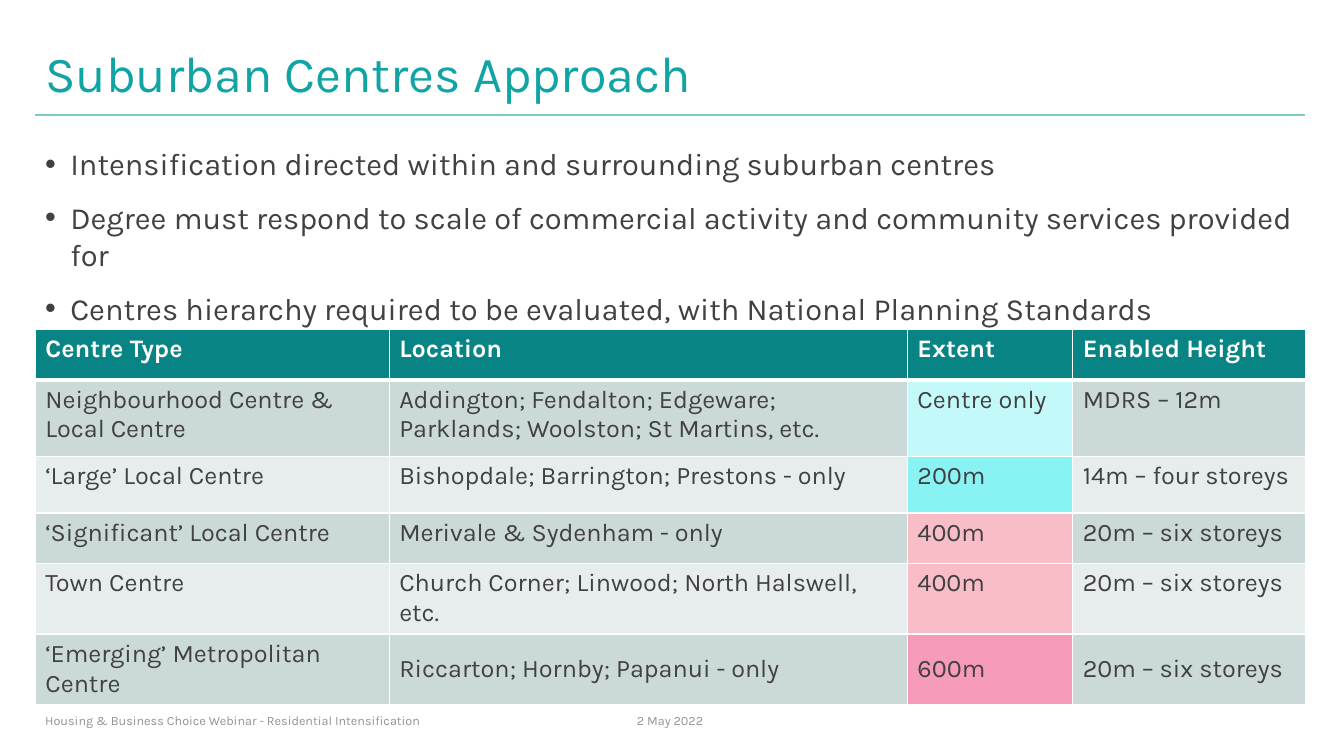
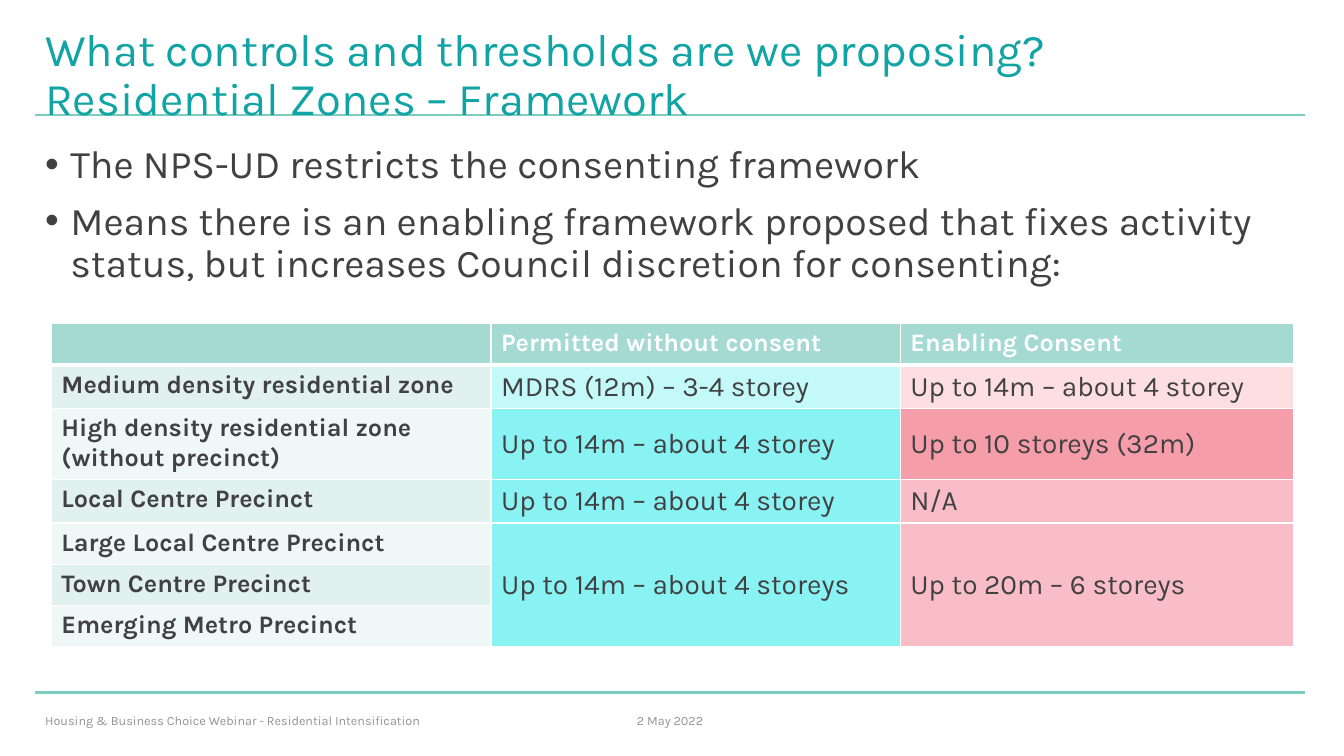
from dataclasses import dataclass

from lxml.etree import SubElement
from pptx import Presentation
from pptx.dml.color import RGBColor
from pptx.enum.shapes import MSO_CONNECTOR
from pptx.enum.text import MSO_ANCHOR, PP_ALIGN
from pptx.oxml import parse_xml
from pptx.oxml.ns import nsdecls, qn
from pptx.util import Pt

PX = 9144
FONT = "Karla"
WHITE = RGBColor(0xFF, 0xFF, 0xFF)
INK = RGBColor(0x41, 0x40, 0x42)
TITLE_TEAL = RGBColor(0x12, 0xA4, 0xA4)
RULE_TEAL = RGBColor(0x7C, 0xCC, 0xBF)
FOOTER_GREY = RGBColor(0x93, 0x93, 0x93)
DARK_TEAL = RGBColor(0x09, 0x84, 0x84)
SOFT_TEAL = RGBColor(0xA4, 0xDA, 0xD2)
GREY_BANDS = (RGBColor(0xCC, 0xD9, 0xD9), RGBColor(0xE7, 0xED, 0xED))
MINT_BANDS = (RGBColor(0xE0, 0xF1, 0xEE), RGBColor(0xF0, 0xF8, 0xF7))
PALE_CYAN = RGBColor(0xC4, 0xF9, 0xF9)
CYAN = RGBColor(0x89, 0xF2, 0xF2)
PALE_PINK = RGBColor(0xFC, 0xDE, 0xE3)
PINK = RGBColor(0xF9, 0xBD, 0xC7)
CORAL = RGBColor(0xF6, 0x9D, 0xAA)
ROSE = RGBColor(0xF7, 0x9B, 0xBA)

TITLE_BOX = (35, 40, 1260, 72)
FOOTER_BOX = (35, 695, 503, 40)
DATE_BOX = (607, 695, 115, 40)
RULE_LEFT, RULE_RIGHT = 35, 1294
RULE_TOPS = (687, 114)


@dataclass
class Cell:
    """Content and look of one table cell."""
    text: str
    fill: RGBColor
    size: int = 18
    bold: bool = False
    color: RGBColor = INK
    anchor: MSO_ANCHOR = MSO_ANCHOR.TOP
    row_span: int = 1


def scaled(box):
    """Turn px lengths into EMU."""
    return [length * PX for length in box]


def add_run(paragraph, text, size, color, bold=False):
    """Add one formatted run to a paragraph."""
    run = paragraph.add_run()
    run.text = text
    run.font.name = FONT
    run.font.size = Pt(size)
    run.font.bold = bold
    run.font.color.rgb = color


def add_text_frame(slide, box, anchor=MSO_ANCHOR.MIDDLE):
    """Add a wrapping text box and return its text frame."""
    frame = slide.shapes.add_textbox(*scaled(box)).text_frame
    frame.word_wrap = True
    frame.vertical_anchor = anchor
    return frame


def add_rule(slide, top):
    """Draw a horizontal teal rule across the slide."""
    ends = scaled((RULE_LEFT, top, RULE_RIGHT, top))
    rule = slide.shapes.add_connector(MSO_CONNECTOR.STRAIGHT, *ends)
    rule.line.color.rgb = RULE_TEAL
    rule.line.width = Pt(1.5)
    SubElement(rule._element.spPr, qn("a:effectLst"))


def add_title(slide, lines, size):
    """Write the title, one run for each line."""
    paragraph = add_text_frame(slide, TITLE_BOX).paragraphs[0]
    paragraph.line_spacing = 0.9
    for index, line in enumerate(lines):
        if index:
            paragraph.add_line_break()
        add_run(paragraph, line, size, TITLE_TEAL)


def add_footer(slide):
    """Write the date and the webinar name."""
    for box, text, alignment in (
        (DATE_BOX, "2 May 2022", PP_ALIGN.CENTER),
        (FOOTER_BOX, "Housing & Business Choice Webinar - Residential Intensification", PP_ALIGN.LEFT),
    ):
        paragraph = add_text_frame(slide, box).paragraphs[0]
        paragraph.alignment = alignment
        add_run(paragraph, text, 9, FOOTER_GREY)


def add_bullets(slide, box, items, size, line_spacing, before, after):
    """Write a bulleted list with a hanging indent."""
    frame = add_text_frame(slide, box, MSO_ANCHOR.TOP)
    for index, item in enumerate(items):
        paragraph = frame.add_paragraph() if index else frame.paragraphs[0]
        properties = paragraph._p.get_or_add_pPr()
        properties.set("marL", str(25 * PX))
        properties.set("indent", str(-25 * PX))
        SubElement(properties, qn("a:buFont")).set("typeface", "Arial")
        SubElement(properties, qn("a:buChar")).set("char", "•")
        paragraph.line_spacing = line_spacing
        paragraph.space_before = Pt(before if index else 0)
        paragraph.space_after = Pt(after)
        add_run(paragraph, item, size, INK)


def add_borders(cell, row):
    """Give a cell white borders, thick between header and body."""
    widths = {"L": 1, "R": 1, "T": 3 if row == 1 else 1, "B": 3 if row == 0 else 1}
    properties = cell._tc.get_or_add_tcPr()
    for index, (side, width) in enumerate(widths.items()):
        properties.insert(index, parse_xml(
            f'<a:ln{side} {nsdecls("a")} w="{Pt(width)}"><a:solidFill>'
            f'<a:srgbClr val="{WHITE}"/></a:solidFill></a:ln{side}>'))


def fill_cell(cell, content):
    """Apply the content and look to a table cell."""
    cell.fill.solid()
    cell.fill.fore_color.rgb = content.fill
    cell.vertical_anchor = content.anchor
    frame = cell.text_frame
    for index, line in enumerate(content.text.splitlines()):
        paragraph = frame.add_paragraph() if index else frame.paragraphs[0]
        add_run(paragraph, line, content.size, content.color, content.bold)


def add_grid(slide, left, top, columns, heights, rows):
    """Place a table whose size follows from its columns and rows."""
    box = scaled((left, top, sum(columns), sum(heights)))
    table = slide.shapes.add_table(len(heights), len(columns), *box).table
    table.horz_banding = False
    for column, width in zip(table.columns, columns):
        column.width = width * PX
    for row, height in zip(table.rows, heights):
        row.height = height * PX
    for row_index, contents in enumerate(rows):
        for column_index in range(len(columns)):
            cell = table.cell(row_index, column_index)
            add_borders(cell, row_index)
            if column_index < len(contents):
                content = contents[column_index]
                fill_cell(cell, content)
                if content.row_span > 1:
                    cell.merge(table.cell(row_index + content.row_span - 1, column_index))


def header_row(labels, fill):
    """Return the bold white header cells."""
    return [Cell(label, fill, bold=True, color=WHITE) for label in labels]


def add_base_slide(presentation, title_lines, title_size):
    """Add a blank slide with rules, title and footer."""
    slide = presentation.slides.add_slide(presentation.slide_layouts[6])
    for top in RULE_TOPS:
        add_rule(slide, top)
    add_title(slide, title_lines, title_size)
    add_footer(slide)
    return slide


def add_centres_slide(presentation):
    """Build the slide on suburban centres."""
    slide = add_base_slide(presentation, ["Suburban Centres Approach"], 36)
    add_bullets(slide, (35, 139, 1260, 161), [
        "Intensification directed within and surrounding suburban centres",
        "Degree must respond to scale of commercial activity and community services provided for",
        "Centres hierarchy required to be evaluated, with National Planning Standards",
    ], 22, 1.0, 6, 6)
    centres = [
        ("Neighbourhood Centre &\nLocal Centre",
         "Addington; Fendalton; Edgeware; Parklands; Woolston; St Martins, etc.",
         "Centre only", "MDRS – 12m", PALE_CYAN),
        ("‘Large’ Local Centre", "Bishopdale; Barrington; Prestons - only",
         "200m", "14m – four storeys", CYAN),
        ("‘Significant’ Local Centre", "Merivale & Sydenham - only",
         "400m", "20m – six storeys", PINK),
        ("Town Centre", "Church Corner; Linwood; North Halswell, etc.",
         "400m", "20m – six storeys", PINK),
        ("‘Emerging’ Metropolitan Centre", "Riccarton; Hornby; Papanui - only",
         "600m", "20m – six storeys", ROSE),
    ]
    rows = [header_row(["Centre Type", "Location", "Extent", "Enabled Height"], DARK_TEAL)]
    for index, (*texts, extent_fill) in enumerate(centres):
        band = GREY_BANDS[index % 2]
        anchor = MSO_ANCHOR.MIDDLE if index == len(centres) - 1 else MSO_ANCHOR.TOP
        fills = (band, band, extent_fill, band)
        rows.append([Cell(text, fill, anchor=anchor) for text, fill in zip(texts, fills)])
    add_grid(slide, 35, 327, (351, 514, 164, 231), (50, 76, 56, 50, 50, 50), rows)


def add_framework_slide(presentation):
    """Build the slide on the residential zones framework."""
    slide = add_base_slide(presentation, [
        "What controls and thresholds are we proposing?",
        "Residential Zones – Framework",
    ], 32.4)
    add_bullets(slide, (35, 139, 1260, 161), [
        "The NPS-UD restricts the consenting framework",
        "Means there is an enabling framework proposed that fixes activity status, "
        "but increases Council discretion for consenting:",
    ], 28, 0.9, 10, 0)
    zones = [
        ("Medium density residential zone", 1,
         ("MDRS (12m) – 3-4 storey", PALE_CYAN), ("Up to 14m – about 4 storey", PALE_PINK)),
        ("High density residential zone (without precinct)", 1,
         ("Up to 14m – about 4 storey", CYAN), ("Up to 10 storeys (32m)", CORAL)),
        ("Local Centre Precinct", 1,
         ("Up to 14m – about 4 storey", CYAN), ("N/A", PINK)),
        ("Large Local Centre Precinct", 3,
         ("Up to 14m – about 4 storeys", CYAN), ("Up to 20m – 6 storeys", PINK)),
        ("Town Centre Precinct", 1),
        ("Emerging Metro Precinct", 1),
    ]
    rows = [header_row(["", "Permitted without consent", "Enabling Consent"], SOFT_TEAL)]
    for index, (zone, row_span, *limits) in enumerate(zones):
        rows.append([Cell(zone, MINT_BANDS[index % 2], bold=True)] + [
            Cell(text, fill, size=20, anchor=MSO_ANCHOR.MIDDLE, row_span=row_span)
            for text, fill in limits])
    add_grid(slide, 51, 321, (436, 406, 390), [41] * len(rows), rows)


def main():
    """Build and save the presentation."""
    presentation = Presentation()
    presentation.slide_width, presentation.slide_height = scaled((1333, 750))
    add_centres_slide(presentation)
    add_framework_slide(presentation)
    presentation.save("out.pptx")


if __name__ == "__main__":
    main()
